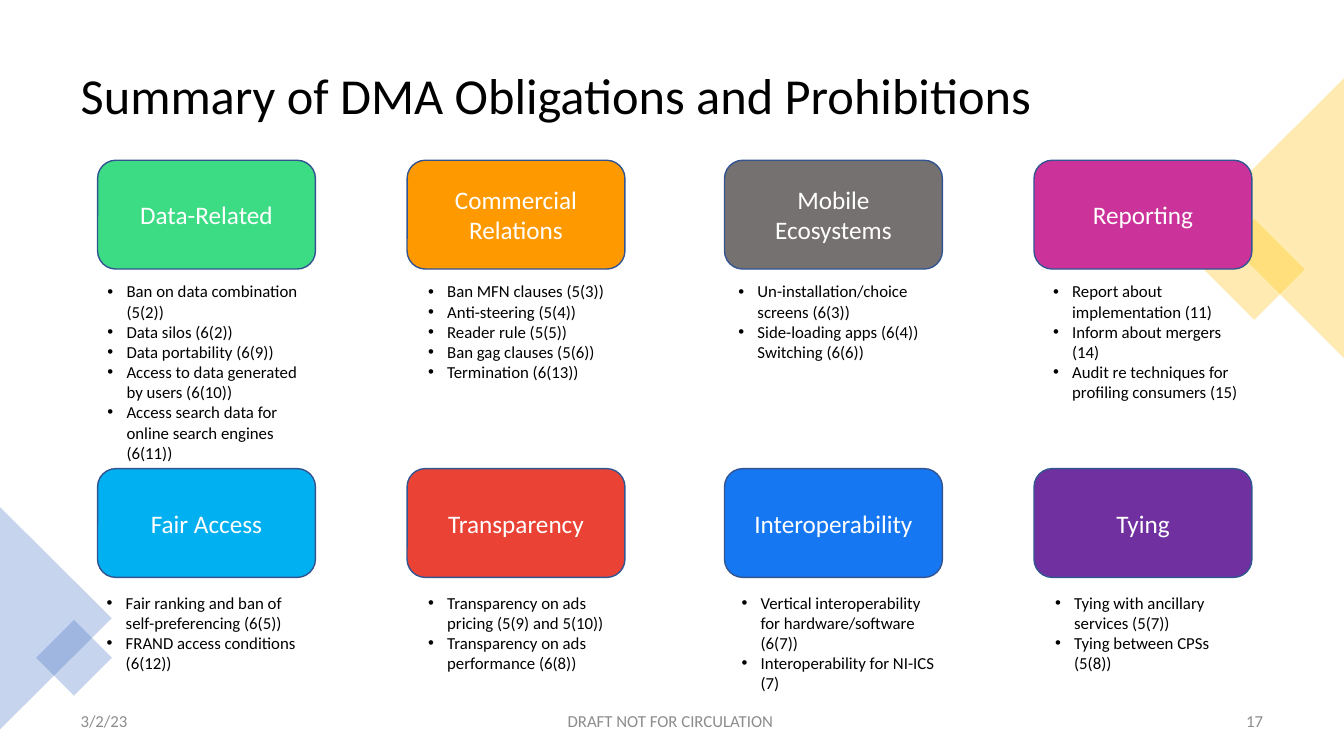
import pptx
import pptx.util
import pptx.dml.color
import pptx.enum.shapes
import pptx.enum.text
import lxml.etree
import pptx.oxml.ns

Cm = pptx.util.Cm
Pt = pptx.util.Pt
Align = pptx.enum.text.PP_ALIGN
Shape = pptx.enum.shapes.MSO_SHAPE
MIDDLE = pptx.enum.text.MSO_ANCHOR.MIDDLE
qn = pptx.oxml.ns.qn

COLORS = {
    "black": "000000", "white": "FFFFFF", "footer": "8C8C8C", "outline": "325491",
    "gold": "FFC000", "blue": "4472C4",
    "green": "3CDC85", "orange": "FF9900", "gray": "767171", "magenta": "CB329A",
    "sky": "00B0F0", "red": "EA4335", "azure": "1677F3", "purple": "7030A0",
}


def rgb(name):
    return pptx.dml.color.RGBColor.from_string(COLORS[name])


def style(paragraph, size, color, alignment=Align.LEFT):
    paragraph.alignment = alignment
    paragraph.font.name = "Calibri"
    paragraph.font.size = Pt(size)
    paragraph.font.color.rgb = rgb(color)


presentation = pptx.Presentation()
presentation.slide_width = Cm(33.87)
presentation.slide_height = Cm(19.05)
slide = presentation.slides.add_slide(presentation.slide_layouts[5])

# Title
title = slide.shapes.title
title.left, title.top, title.width, title.height = Cm(1.78), Cm(0.89), Cm(30.3), Cm(3.15)
title.text_frame.text = "Summary of DMA Obligations and Prohibitions"
title.text_frame.vertical_anchor = MIDDLE
title.text_frame.paragraphs[0].line_spacing = 0.9
style(title.text_frame.paragraphs[0], 36, "black")

# Translucent corner decorations
decorations = [
    (Shape.RECTANGLE, 30.71, 5.89, 1.8, 1.8, 45, "gold"),
    (Shape.ISOSCELES_TRIANGLE, 28.58, 3.73, 7.04, 3.53, 270, "gold"),
    (Shape.ISOSCELES_TRIANGLE, -1.4, 14.17, 5.61, 2.82, 90, "blue"),
    (Shape.RECTANGLE, 1.19, 15.9, 1.35, 1.35, 45, "blue"),
]
for kind, left, top, width, height, rotation, color in decorations:
    shape = slide.shapes.add_shape(kind, Cm(left), Cm(top), Cm(width), Cm(height))
    shape.rotation = rotation
    shape.shadow.inherit = False
    shape.fill.solid()
    shape.fill.fore_color.rgb = rgb(color)
    shape.line.fill.background()
    color_element = shape.fill._xPr.find(qn("a:solidFill"))[0]
    lxml.etree.SubElement(color_element, qn("a:alpha")).set("val", "30000")

# Footer
footers = [
    ("3/2/23", 1.78, 7.62, Align.LEFT),
    ("DRAFT NOT FOR CIRCULATION ", 11.23, 11.43, Align.CENTER),
    ("17", 24.46, 7.62, Align.RIGHT),
]
for text, left, width, alignment in footers:
    box = slide.shapes.add_textbox(Cm(left), Cm(17.65), Cm(width), Cm(1.02))
    box.text_frame.word_wrap = True
    box.text_frame.vertical_anchor = MIDDLE
    box.text_frame.text = text
    box.text_frame.paragraphs[0].space_after = Pt(6)
    style(box.text_frame.paragraphs[0], 12, "footer", alignment)

# Categories: heading, color, list left, list width, list line count, items
categories = [
    ("Data-Related", "green", 2.46, 5.51, 9, [
        "Ban on data combination (5(2))", "Data silos (6(2))", "Data portability (6(9))",
        "Access to data generated by users (6(10))",
        "Access search data for online search engines (6(11))"]),
    ("Commercial Relations", "orange", 10.54, 5.21, 5, [
        "Ban MFN clauses (5(3))", "Anti-steering (5(4))", "Reader rule (5(5))",
        "Ban gag clauses (5(6))", "Termination (6(13))"]),
    ("Mobile Ecosystems", "gray", 18.36, 5.36, 4, [
        "Un-installation/choice screens (6(3))",
        "Side-loading apps (6(4)) Switching (6(6))"]),
    ("Reporting", "magenta", 26.29, 5.26, 6, [
        "Report about implementation (11)", "Inform about mergers (14)",
        "Audit re techniques for profiling consumers (15)"]),
    ("Fair Access", "sky", 2.44, 5.51, 4, [
        "Fair ranking and ban of self-preferencing (6(5))",
        "FRAND access conditions (6(12))"]),
    ("Transparency", "red", 10.54, 5.21, 4, [
        "Transparency on ads pricing (5(9) and 5(10))",
        "Transparency on ads performance (6(8))"]),
    ("Interoperability", "azure", 18.44, 5.49, 5, [
        "Vertical interoperability for hardware/software (6(7))",
        "Interoperability for NI-ICS (7)"]),
    ("Tying", "purple", 26.34, 5.21, 4, [
        "Tying with ancillary services (5(7))", "Tying between CPSs (5(8))"]),
]
card_lefts = [2.46, 10.26, 18.26, 26.06]
card_tops = [4.04, 11.81]
list_tops = [6.96, 14.8]

for index, (heading, color, left, width, lines, items) in enumerate(categories):
    row, column = divmod(index, len(card_lefts))

    # Heading card
    card = slide.shapes.add_shape(Shape.ROUNDED_RECTANGLE, Cm(card_lefts[column]),
                                  Cm(card_tops[row]), Cm(5.49), Cm(2.74))
    card.shadow.inherit = False
    card.fill.solid()
    card.fill.fore_color.rgb = rgb(color)
    card.line.color.rgb = rgb("outline")
    card.line.width = Pt(1)
    card.text_frame.word_wrap = True
    card.text_frame.vertical_anchor = MIDDLE
    card.text_frame.text = heading
    style(card.text_frame.paragraphs[0], 18, "white", Align.CENTER)

    # Bulleted list below the card
    box = slide.shapes.add_textbox(Cm(left), Cm(list_tops[row]), Cm(width),
                                   Cm(0.25 + 0.51 * lines))
    box.text_frame.word_wrap = True
    box.text_frame.text = "\n".join(items)
    for paragraph in box.text_frame.paragraphs:
        style(paragraph, 12, "black")
        properties = paragraph._p.get_or_add_pPr()
        properties.set("marL", str(Cm(0.48)))
        properties.set("indent", str(-Cm(0.48)))
        bullet_font = lxml.etree.Element(qn("a:buFont"), typeface="Arial")
        bullet = lxml.etree.Element(qn("a:buChar"), char="•")
        properties.insert(0, bullet_font)
        properties.insert(1, bullet)

presentation.save("out.pptx")
